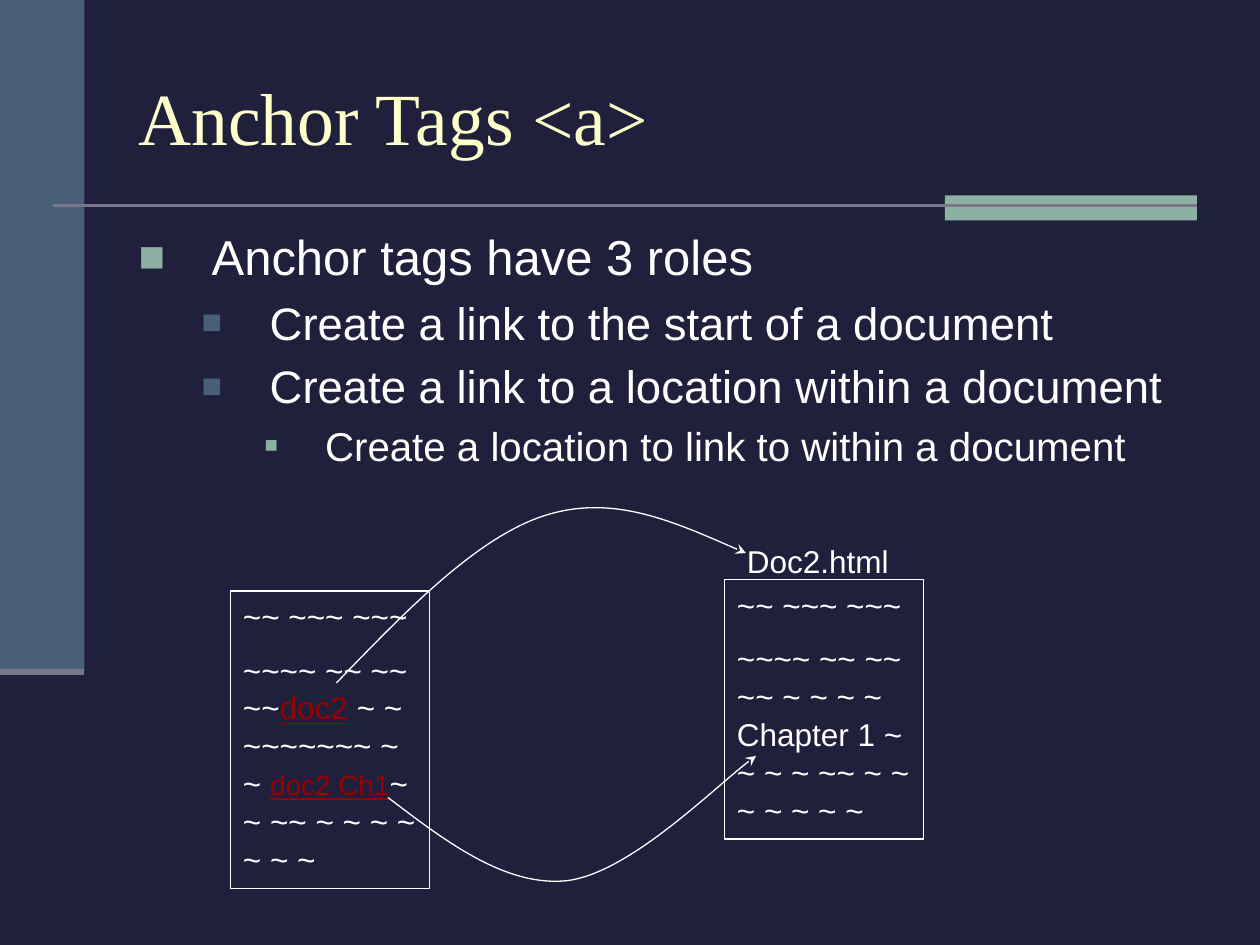
from lxml import etree
from pptx import Presentation
from pptx import util as u
from pptx.dml.color import RGBColor
from pptx.enum import shapes, text
from pptx.oxml.ns import qn

NAVY, SLATE, SAGE, GREY = "21203C", "476077", "8CB0A2", "79788A"
WHITE, CREAM, LINK = "FFFFFF", "FFFFCC", "990000"

# level: text size, left margin, hanging indent, bullet colour, bullet size in percent
LEVELS = [
    (28, 0.58, 0.58, SAGE, 90),
    (26, 1.04, 0.54, SLATE, 75),
    (23, 1.48, 0.48, SAGE, 55),
]
ROLES = [
    (0, "Anchor tags have 3 roles"),
    (1, "Create a link to the start of a document"),
    (1, "Create a link to a location within a document"),
    (2, "Create a location to link to within a document"),
]
FIRST_LINE = [("~~ ~~~ ~~~",)]
SOURCE_PAGE = [
    FIRST_LINE,
    [("~~~~ ~~ ~~ ~~",), ("doc2", 18, LINK), (" ~ ~ ~~~~~~~ ~ ~ ",),
     ("doc2 Ch1", 16, LINK), ("~ ~ ~~ ~ ~ ~ ~ ~ ~ ~",)],
]
TARGET_PAGE = [
    FIRST_LINE,
    [("~~~~ ~~ ~~ ~~ ~ ~ ~ ~ Chapter 1 ~ ~ ~ ~ ~~ ~ ~ ~ ~ ~ ~ ~",)],
]
# Start point, then two control points and an end point for each curve
LINK_TO_START = [(2.67, 5.42), (3.23, 4.84), (3.79, 4.26), (4.33, 4.09),
                 (4.87, 3.92), (5.39, 4.16), (5.92, 4.39)]
LINK_TO_CHAPTER = [(3.08, 6.33), (3.55, 6.69), (4.02, 7.04), (4.5, 6.99),
                   (4.99, 6.93), (5.74, 6.18), (6, 6)]


def rgb(value):
    return RGBColor.from_string(value)


def inches(*lengths):
    return [u.Inches(length) for length in lengths]


def add_run(paragraph, words, size=18, color=WHITE, font="Arial"):
    run = paragraph.add_run()
    run.text = words
    run.font.size = u.Pt(size)
    run.font.name = font
    run.font.color.rgb = rgb(color)
    if color == LINK:
        run.font.underline = True


def paragraphs(frame, count):
    """Return the given number of paragraphs, starting with the one already there."""
    return [frame.paragraphs[0]] + [frame.add_paragraph() for _ in range(count - 1)]


def place(shape, *box):
    shape.left, shape.top, shape.width, shape.height = inches(*box)


def add_band(slide, color, *box):
    band = slide.shapes.add_shape(shapes.MSO_SHAPE.RECTANGLE, *inches(*box))
    band.shadow.inherit = False
    band.fill.solid()
    band.fill.fore_color.rgb = rgb(color)
    band.line.fill.background()


def add_rule(slide, left, right, y, weight):
    rule = slide.shapes.add_connector(
        shapes.MSO_CONNECTOR.STRAIGHT, *inches(left, y, right, y))
    rule.line.color.rgb = rgb(GREY)
    rule.line.width = u.Pt(weight)
    etree.SubElement(rule._element.spPr, qn("a:effectLst"))


def set_title(title, words):
    place(title, 1, 0.3, 8.5, 1.25)
    title.text_frame.vertical_anchor = text.MSO_ANCHOR.MIDDLE
    paragraph = title.text_frame.paragraphs[0]
    paragraph.alignment = text.PP_ALIGN.LEFT
    add_run(paragraph, words, 42, CREAM, "Times New Roman")


def set_bullet(paragraph, margin, hanging, color, percent):
    props = paragraph._p.get_or_add_pPr()
    props.set("marL", str(u.Inches(margin)))
    props.set("indent", str(-u.Inches(hanging)))
    bullet_color = etree.SubElement(props, qn("a:buClr"))
    etree.SubElement(bullet_color, qn("a:srgbClr"), val=color)
    etree.SubElement(props, qn("a:buSzPct"), val=str(percent * 1000))
    etree.SubElement(props, qn("a:buFont"), typeface="Arial")
    etree.SubElement(props, qn("a:buChar"), char="■")


def set_roles(body):
    place(body, 1, 1.75, 8.67, 2.42)
    frame = body.text_frame
    frame.auto_size = text.MSO_AUTO_SIZE.NONE
    for paragraph, (level, words) in zip(paragraphs(frame, len(ROLES)), ROLES):
        size, *bullet = LEVELS[level]
        paragraph.level = level
        paragraph.space_before = u.Pt(0.2 * size)
        set_bullet(paragraph, *bullet)
        add_run(paragraph, words, size)


def add_page(slide, content, *box, outlined=True):
    page = slide.shapes.add_textbox(*inches(*box))
    if outlined:
        page.line.color.rgb = rgb(WHITE)
        page.line.width = u.Pt(0.75)
    page.text_frame.word_wrap = True
    for paragraph, runs in zip(paragraphs(page.text_frame, len(content)), content):
        paragraph.space_before = u.Pt(9)
        for run in runs:
            add_run(paragraph, *run)


def add_curved_arrow(slide, points):
    start, *rest = [tuple(inches(*point)) for point in points]
    builder = slide.shapes.build_freeform(*start)
    builder.add_line_segments(rest, close=False)
    arrow = builder.convert_to_shape()
    arrow.shadow.inherit = False
    arrow.fill.background()
    arrow.line.color.rgb = rgb(WHITE)
    arrow.line.width = u.Pt(0.75)
    etree.SubElement(arrow.line._get_or_add_ln(), qn("a:tailEnd"), type="stealth")
    # Turn every three straight segments into one Bézier curve
    segments = list(arrow._element.iter(qn("a:lnTo")))
    for first in range(0, len(segments), 3):
        curve = etree.Element(qn("a:cubicBezTo"))
        segments[first].addprevious(curve)
        for segment in segments[first:first + 3]:
            curve.append(segment[0])
            segment.getparent().remove(segment)


def main():
    deck = Presentation()
    deck.slide_width, deck.slide_height = inches(10, 7.5)
    slide = deck.slides.add_slide(deck.slide_layouts.get_by_name("Title and Content"))
    slide.background.fill.solid()
    slide.background.fill.fore_color.rgb = rgb(NAVY)

    add_band(slide, SLATE, 0, 0, 0.67, 5.33)
    add_band(slide, SAGE, 7.5, 1.55, 2, 0.2)
    add_rule(slide, 0.42, 9.5, 1.63, 1.5)
    add_rule(slide, 0, 0.67, 5.33, 3.5)

    set_title(slide.shapes.title, "Anchor Tags <a>")
    set_roles(slide.placeholders[1])

    add_page(slide, SOURCE_PAGE, 1.83, 4.69, 1.58, 2.36)
    add_page(slide, TARGET_PAGE, 5.75, 4.6, 1.58, 2.06)
    add_curved_arrow(slide, LINK_TO_START)
    add_curved_arrow(slide, LINK_TO_CHAPTER)
    add_page(slide, [[("Doc2.html",)]], 5.83, 4.25, 1.42, 0.4, outlined=False)
    deck.save("out.pptx")


if __name__ == "__main__":
    main()
